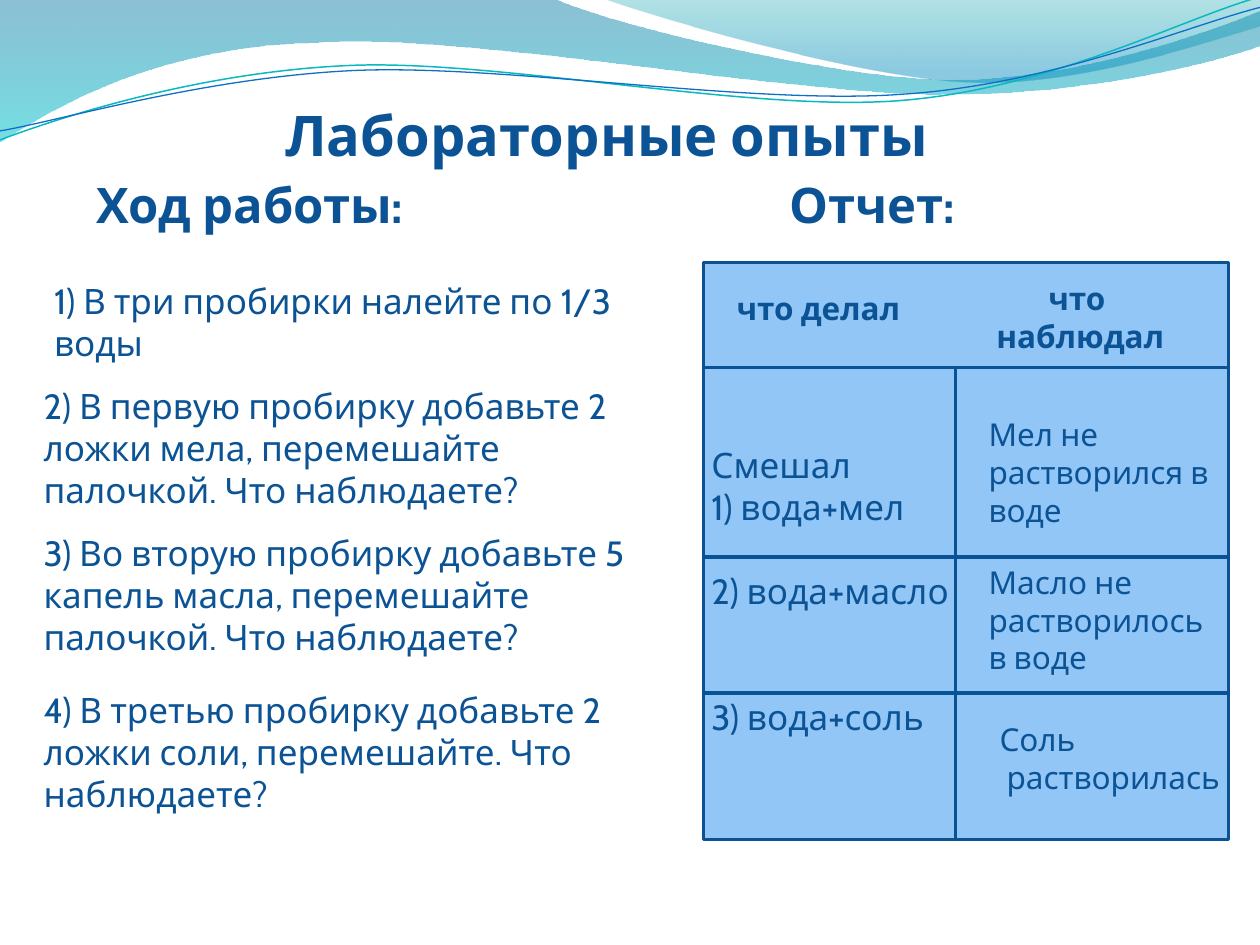
"""Build the laboratory experiments slide: procedure on the left, report grid on the right."""
from math import cos, radians, sin
from typing import NamedTuple

from lxml.etree import SubElement
from pptx import Presentation
from pptx.dml.color import RGBColor
from pptx.enum.shapes import MSO_CONNECTOR, MSO_SHAPE
from pptx.enum.text import MSO_AUTO_SIZE, PP_ALIGN
from pptx.oxml.ns import qn
from pptx.shapes.autoshape import Shape
from pptx.shapes.shapetree import SlideShapes
from pptx.util import Cm, Pt

INK = RGBColor(0x0B, 0x53, 0x94)
CELL_FILL = RGBColor(0x91, 0xC6, 0xF7)
CELL_BORDER = RGBColor(0x0B, 0x52, 0x92)
ROW_RULE = RGBColor(0x09, 0x52, 0x95)
WAVE_BLUE = RGBColor(0x00, 0x74, 0xA1)
WAVE_CYAN = RGBColor(0x00, 0xC6, 0xCF)
CREST_TEAL = RGBColor(0x00, 0xA1, 0xA9)
CREST_BLUE = RGBColor(0x00, 0x8B, 0xBF)
STRAND_TEAL = RGBColor(0x0A, 0xB8, 0xBF)
STRAND_BLUE = RGBColor(0x0F, 0x6F, 0xC6)

Point = tuple[float, float]
Segments = list[tuple[Point, ...]]
STRAND_TILT = 2.7
GRID_LEFT, GRID_SPLIT, GRID_RIGHT = 14.18, 19.26, 24.77
GRID_TOP, HEADER_BOTTOM, GRID_BOTTOM = 5.29, 7.41, 16.93
ROW_BREAKS = (11.22, 13.97)


class Stop(NamedTuple):
    position: float
    color: RGBColor
    opacity: int


class Wave(NamedTuple):
    start: Point
    segments: Segments
    stops: tuple[Stop, Stop]


class Strand(NamedTuple):
    start: Point
    segments: Segments
    center: Point
    color: RGBColor
    weight: float


class Caption(NamedTuple):
    left: float
    top: float
    width: float
    height: float
    size: int
    lines: tuple[str, ...]
    bold: bool = False
    align: PP_ALIGN = PP_ALIGN.LEFT
    gaps: tuple[int, ...] = ()


WAVES = [
    Wave((0, 0), [
        ((11.18, -0.02),),
        ((12.09, 0.43), (16.87, 1.6), (19.25, 1.6)),
        ((21.67, 1.6), (24.33, 0.66), (25.4, 0.23)),
        ((25.43, 0.91),),
        ((24.97, 1.12), (22.1, 1.93), (18.95, 1.9)),
        ((15.8, 1.9), (9.7, 0.71), (6.53, 0.86)),
        ((3.25, 0.91), (1.17, 2.11), (-0.02, 2.87)),
    ], (Stop(0, WAVE_BLUE, 45), Stop(1, WAVE_CYAN, 55))),
    Wave((12.17, -0.02), [
        ((12.93, 0.28), (17.32, 1.57), (19.53, 1.65)),
        ((21.74, 1.75), (24.41, 0.81), (25.4, 0.53)),
        ((25.4, 0),),
    ], (Stop(0, CREST_TEAL, 30), Stop(0.8, CREST_BLUE, 45))),
]
STRANDS = [
    Strand((0, 2.82), [
        ((1.22, 2.36), (4.01, 1.45), (7.04, 1.32)),
        ((10.03, 1.19), (15.06, 2.26), (18.11, 2.03)),
        ((21.16, 1.8), (23.83, 0.38), (25.35, -0.05)),
    ], (12.67, 1.46), STRAND_TEAL, 0.85),
    Strand((0, 2.64), [
        ((1.19, 2.44), (4.17, 1.55), (7.19, 1.42)),
        ((10.24, 1.3), (15.16, 2.13), (18.21, 1.9)),
        ((21.23, 1.7), (23.9, 0.53), (25.4, 0.15)),
    ], (12.69, 1.5), STRAND_BLUE, 0.75),
]
CELLS = [
    (GRID_LEFT, HEADER_BOTTOM, GRID_SPLIT, GRID_BOTTOM),
    (GRID_SPLIT, HEADER_BOTTOM, GRID_RIGHT, GRID_BOTTOM),
    (GRID_LEFT, GRID_TOP, GRID_RIGHT, HEADER_BOTTOM),
]
CAPTIONS = [
    Caption(1.69, 3.39, 6.99, 1.45, 28, ("Ход работы:",), True),
    Caption(5.5, 1.9, 16.08, 1.63, 32, ("Лабораторные опыты",), True),
    Caption(0.84, 5.5, 12.01, 2.74, 20, ("1) В три пробирки налейте по 1/3 воды",)),
    Caption(0.63, 7.62, 13.34, 2.82, 20,
            ("2) В первую пробирку добавьте 2 ложки мела, перемешайте палочкой. Что наблюдаете?",)),
    Caption(0.63, 10.58, 13.13, 2.82, 20,
            ("3) Во вторую пробирку добавьте 5 капель масла, перемешайте палочкой. Что наблюдаете?",)),
    Caption(0.63, 13.75, 12.9, 2.82, 20,
            ("4) В третью пробирку добавьте 2 ложки соли, перемешайте. Что наблюдаете?",)),
    Caption(14.6, 5.71, 4.34, 1.02, 18, ("что делал",), True),
    Caption(19.47, 5.5, 4.62, 1.8, 18, ("что ", "наблюдал"), True, PP_ALIGN.CENTER),
    Caption(14.09, 8.81, 5.66, 6.25, 20,
            ("Смешал", "1) вода+мел", "2) вода+масло", "3) вода+соль"), gaps=(0, 0, 24, 48)),
    Caption(19.68, 8.25, 6.15, 2.57, 18, ("Мел не", "растворился в воде")),
    Caption(19.68, 11.22, 5.08, 3.33, 18, ("Масло не", "растворилось в воде")),
    Caption(19.9, 14.39, 6.05, 1.8, 18, ("Соль", " растворилась")),
    Caption(15.66, 3.39, 6.99, 1.45, 28, ("Отчет:",), True),
]


def turn(point: Point, center: Point, degrees: float) -> Point:
    """Turn a point clockwise about a center."""
    dx, dy = point[0] - center[0], point[1] - center[1]
    c, s = cos(radians(degrees)), sin(radians(degrees))
    return center[0] + dx * c - dy * s, center[1] + dx * s + dy * c


def draw_outline(shapes: SlideShapes, start: Point, segments: Segments, close: bool) -> Shape:
    """Draw an outline whose three-point segments are cubic curves."""
    points = [point for segment in segments for point in segment]
    builder = shapes.build_freeform(Cm(start[0]), Cm(start[1]), scale=1.0)
    builder.add_line_segments([(Cm(x), Cm(y)) for x, y in points], close=close)
    outline = builder.convert_to_shape()
    outline.shadow.inherit = False
    legs = iter(list(outline._element.iter(qn("a:lnTo"))))
    for segment in segments:
        first, *others = [next(legs) for _ in segment]
        if others:
            first.tag = qn("a:cubicBezTo")
        for leg in others:
            first.append(leg[0])
            leg.getparent().remove(leg)
    return outline


def draw_wave(shapes: SlideShapes, wave: Wave) -> None:
    """Draw a wave filled with a translucent downward gradient."""
    outline = draw_outline(shapes, wave.start, wave.segments, True)
    outline.line.fill.background()
    outline.fill.gradient()
    outline.fill.gradient_angle = 270
    for target, stop in zip(outline.fill.gradient_stops, wave.stops):
        target.position = stop.position
        target.color.rgb = stop.color
    for color, stop in zip(outline._element.iter(qn("a:srgbClr")), wave.stops):
        SubElement(color, qn("a:alpha")).set("val", str(stop.opacity * 1000))


def draw_strand(shapes: SlideShapes, strand: Strand) -> None:
    """Draw a thin open curve, tilted about its center."""
    level = [tuple(turn(p, strand.center, STRAND_TILT) for p in segment) for segment in strand.segments]
    outline = draw_outline(shapes, turn(strand.start, strand.center, STRAND_TILT), level, False)
    outline.rotation = -STRAND_TILT
    outline.fill.background()
    outline.line.color.rgb = strand.color
    outline.line.width = Pt(strand.weight)


def draw_cell(shapes: SlideShapes, left: float, top: float, right: float, bottom: float) -> None:
    """Draw a bordered block of the report grid."""
    cell = shapes.add_shape(MSO_SHAPE.RECTANGLE, Cm(left), Cm(top), Cm(right - left), Cm(bottom - top))
    cell.shadow.inherit = False
    cell.fill.solid()
    cell.fill.fore_color.rgb = CELL_FILL
    cell.line.color.rgb = CELL_BORDER
    cell.line.width = Pt(2)


def draw_row_rule(shapes: SlideShapes, y: float) -> None:
    """Draw a horizontal rule across the report grid."""
    rule = shapes.add_connector(MSO_CONNECTOR.STRAIGHT, Cm(GRID_LEFT), Cm(y), Cm(GRID_RIGHT), Cm(y))
    rule.line.color.rgb = ROW_RULE
    rule.line.width = Pt(2.25)
    SubElement(rule._element.spPr, qn("a:effectLst"))


def draw_caption(shapes: SlideShapes, caption: Caption) -> None:
    """Draw a text box with one paragraph per line."""
    frame = shapes.add_textbox(*(Cm(length) for length in caption[:4])).text_frame
    frame.word_wrap = True
    frame.auto_size = MSO_AUTO_SIZE.SHAPE_TO_FIT_TEXT
    frame.text = "\n".join(caption.lines)
    font_format = {"name": "Cabin", "size": Pt(caption.size), "bold": caption.bold}
    for paragraph in frame.paragraphs:
        paragraph.alignment = caption.align
        font = paragraph.runs[0].font
        font.color.rgb = INK
        for attribute, value in font_format.items():
            setattr(font, attribute, value)
    for paragraph, gap in zip(frame.paragraphs, caption.gaps):
        paragraph.space_before = Pt(gap)


def main() -> None:
    """Assemble and save the slide."""
    deck = Presentation()
    deck.slide_width, deck.slide_height = Cm(25.4), Cm(19.05)
    shapes = deck.slides.add_slide(deck.slide_layouts[6]).shapes
    for draw, parts in ((draw_wave, WAVES), (draw_strand, STRANDS)):
        for part in parts:
            draw(shapes, part)
    for cell in CELLS:
        draw_cell(shapes, *cell)
    for caption in CAPTIONS:
        draw_caption(shapes, caption)
    for y in ROW_BREAKS:
        draw_row_rule(shapes, y)
    deck.save("out.pptx")


if __name__ == "__main__":
    main()
